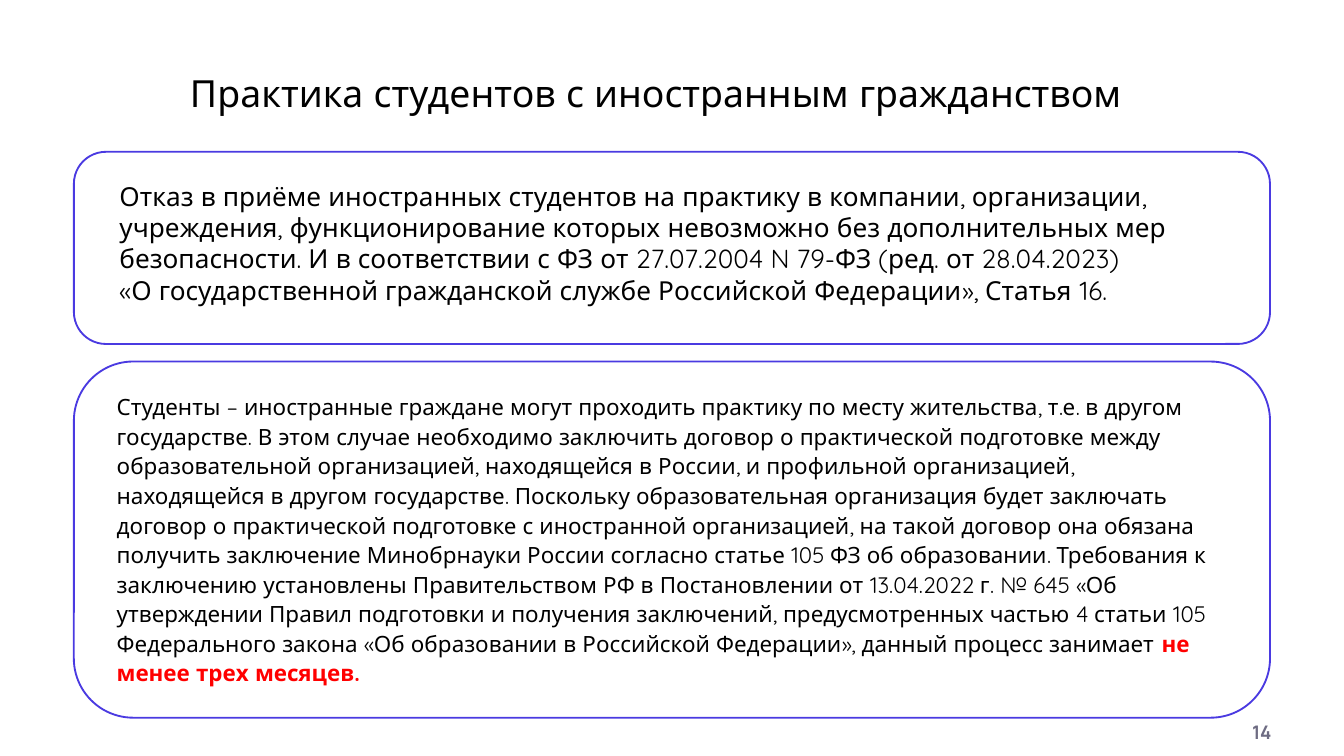
from pptx import Presentation
from pptx.dml.color import RGBColor
from pptx.enum.shapes import MSO_SHAPE
from pptx.enum.text import MSO_ANCHOR, PP_ALIGN
from pptx.util import Inches, Pt

WHITE = RGBColor(0xFF, 0xFF, 0xFF)
BLACK = RGBColor(0, 0, 0)
RED = RGBColor(0xFF, 0, 0)
BLUE = RGBColor(0x4A, 0x3A, 0xE1)
GREY = RGBColor(0x6E, 0x6C, 0x83)

WIDTH = 10
HEIGHT = WIDTH * 9 / 16
MARGIN = 0.55
CARDS = [(1.13, 1.43), (2.69, 2.65)]  # top, height

# Each paragraph is a list of runs: text, colour, bold
TITLE = [[("Практика студентов с иностранным гражданством", BLACK, False)]]
REFUSAL = [
    [("Отказ в приёме иностранных студентов на практику в компании, "
      "организации, учреждения, функционирование которых невозможно без "
      "дополнительных мер безопасности. И в соответствии с ФЗ от 27.07.2004 "
      "N 79-ФЗ (ред. от 28.04.2023)", BLACK, False)],
    [("«О государственной гражданской службе Российской Федерации», "
      "Статья 16.", BLACK, False)],
]
ABROAD = [[
    ("Студенты – иностранные граждане могут проходить практику по месту "
     "жительства, т.е. в другом государстве. В этом случае необходимо "
     "заключить договор о практической подготовке между образовательной "
     "организацией, находящейся в России, и профильной организацией, "
     "находящейся в другом государстве. Поскольку образовательная "
     "организация будет заключать договор о практической подготовке с "
     "иностранной организацией, на такой договор она обязана получить "
     "заключение Минобрнауки России согласно статье 105 ФЗ об образовании. "
     "Требования к заключению установлены Правительством РФ в Постановлении "
     "от 13.04.2022 г. № 645 «Об утверждении Правил подготовки и получения "
     "заключений, предусмотренных частью 4 статьи 105 Федерального закона "
     "«Об образовании в Российской Федерации», данный процесс занимает ",
     BLACK, False),
    ("не менее трех месяцев.", RED, True),
]]
NUMBER = [[("14", GREY, True)]]

LEFT, MID, RIGHT = PP_ALIGN.LEFT, PP_ALIGN.CENTER, PP_ALIGN.RIGHT
TOP, HALF = MSO_ANCHOR.TOP, MSO_ANCHOR.MIDDLE

# box, paragraphs, size, font, alignment, anchor, line spacing
TEXTS = [
    ((MARGIN, 0.45, 8.66, 0.52), TITLE, 20, "Quicksand", MID, HALF, 0.9),
    ((0.77, 2.86, 8.38, 2.3), ABROAD, 12, "Quicksand", LEFT, TOP, 1.1),
    ((0.79, 1.29, 8.23, 1.04), REFUSAL, 14, "Quicksand", LEFT, TOP, 1.0),
    ((5.5, 5.28, 4.06, 0.33), NUMBER, 10, "Manrope", RIGHT, HALF, 1.0),
]


def add_card(slide, top, height):
    box = (MARGIN, top, WIDTH - 2 * MARGIN, height)
    card = slide.shapes.add_shape(MSO_SHAPE.ROUNDED_RECTANGLE, *map(Inches, box))
    card.shadow.inherit = False
    card.fill.solid()
    card.fill.fore_color.rgb = WHITE
    card.line.color.rgb = BLUE
    card.line.width = Pt(1)


def add_text(slide, box, paras, size, font, align, anchor, space):
    frame = slide.shapes.add_textbox(*map(Inches, box)).text_frame
    frame.word_wrap = True
    frame.vertical_anchor = anchor
    if anchor == HALF:
        frame.margin_top = frame.margin_bottom = Inches(0.1)
    for i, runs in enumerate(paras):
        para = frame.add_paragraph() if i else frame.paragraphs[0]
        para.alignment = align
        para.line_spacing = space
        for text, color, bold in runs:
            run = para.add_run()
            run.text = text
            run.font.name = font
            run.font.size = Pt(size)
            run.font.bold = bold
            run.font.color.rgb = color


def main():
    deck = Presentation()
    deck.slide_width, deck.slide_height = Inches(WIDTH), Inches(HEIGHT)
    slide = deck.slides.add_slide(deck.slide_layouts[6])
    for top, height in CARDS:
        add_card(slide, top, height)
    for item in TEXTS:
        add_text(slide, *item)
    deck.save("out.pptx")


if __name__ == "__main__":
    main()
